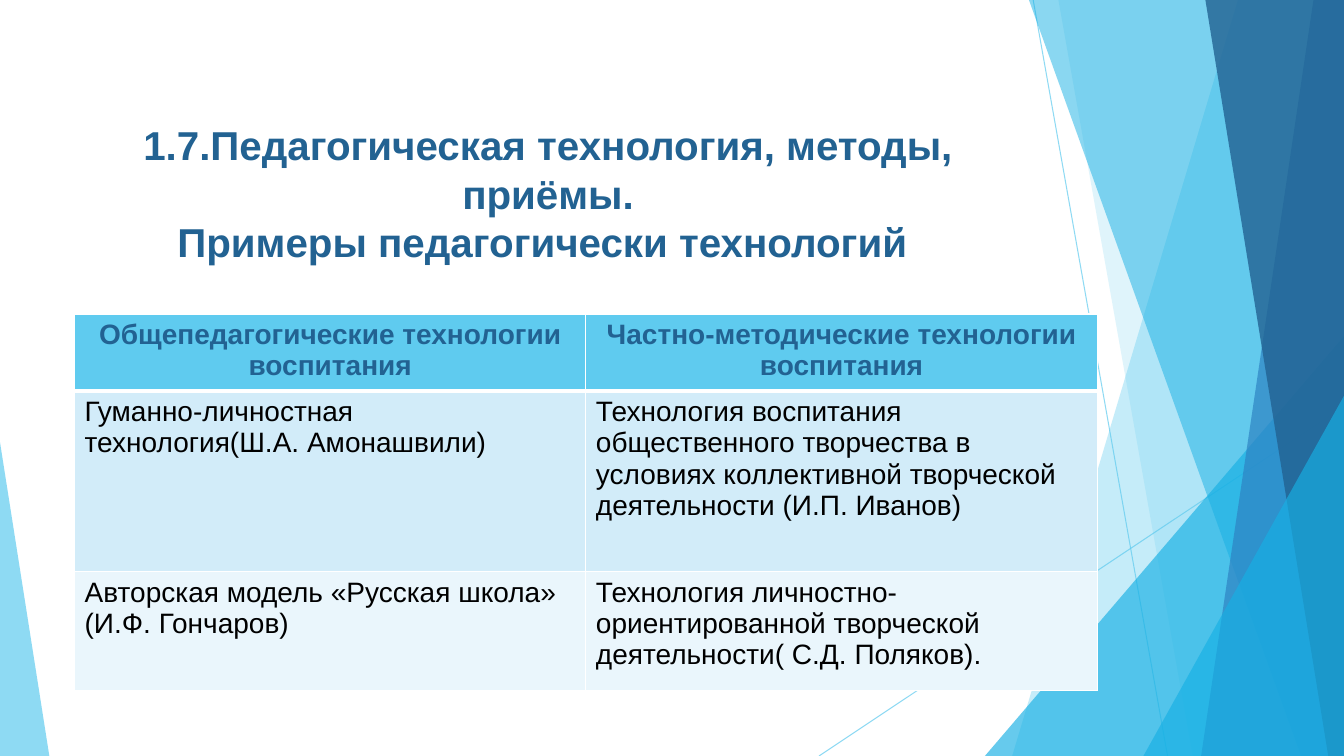
import dataclasses

import lxml.etree
import pptx
import pptx.dml.color
import pptx.enum.shapes
import pptx.enum.text
import pptx.oxml.ns
import pptx.util

ALIGN = pptx.enum.text.PP_ALIGN
TRIANGLE = pptx.enum.shapes.MSO_SHAPE.ISOSCELES_TRIANGLE
STRAIGHT = pptx.enum.shapes.MSO_CONNECTOR.STRAIGHT


@dataclasses.dataclass(frozen=True)
class Theme:
    font: str = "Arial"
    title_size: float = 28.8
    title_leading: float = 34.5
    table_size: float = 20
    sky: str = "5FCBEF"
    azure: str = "17B0E4"
    blue: str = "2E83C3"
    navy: str = "226292"
    black: str = "000000"
    white: str = "FFFFFF"
    row_fills: tuple = ("5FCBEF", "D2ECF9", "EAF6FC")
    thin: float = 0.75
    border: float = 1
    header_border: float = 3


def rgb(color):
    return pptx.dml.color.RGBColor.from_string(color)


def assign(target, values):
    for name, value in values.items():
        setattr(target, name, value)


def add_xml(parent, tag, **attributes):
    return lxml.etree.SubElement(parent, pptx.oxml.ns.qn(tag), attributes)


class SlideBuilder:
    """Draws themed elements on one slide, with lengths in px."""

    SCALE = 9525
    WIDTH, HEIGHT = 1280, 720

    def __init__(self, presentation, theme):
        assign(presentation, {"slide_width": self.px(self.WIDTH),
                              "slide_height": self.px(self.HEIGHT)})
        self.theme = theme
        self.slide = presentation.slides.add_slide(presentation.slide_layouts[6])
        self.shapes = self.slide.shapes

    def px(self, length):
        return pptx.util.Emu(length * self.SCALE)

    def box(self, *lengths):
        return [self.px(length) for length in lengths]

    def paint(self, fill, color, opacity=100):
        fill.solid()
        fill.fore_color.rgb = rgb(color)
        if opacity < 100:
            for node in fill._xPr.iter(pptx.oxml.ns.qn("a:srgbClr")):
                add_xml(node, "a:alpha", val=str(opacity * 1000))

    def finish(self, shape, color, opacity):
        shape.shadow.inherit = False
        shape.line.fill.background()
        self.paint(shape.fill, color, opacity)

    def line(self, start, end, color, opacity):
        connector = self.shapes.add_connector(STRAIGHT, *self.box(*start, *end))
        connector.line.width = pptx.util.Pt(self.theme.thin)
        self.paint(connector.line.fill, color, opacity)
        add_xml(connector._element.spPr, "a:effectLst")

    def band(self, top_x, bottom_x, color, opacity):
        builder = self.shapes.build_freeform(top_x, 0, scale=self.SCALE)
        builder.add_line_segments([(self.WIDTH, 0), (self.WIDTH, self.HEIGHT),
                                   (bottom_x, self.HEIGHT)])
        self.finish(builder.convert_to_shape(), color, opacity)

    def triangle(self, left, top, width, apex, color, opacity):
        shape = self.shapes.add_shape(
            TRIANGLE, *self.box(left, top, width, self.HEIGHT - top))
        shape.adjustments[0] = apex
        self.finish(shape, color, opacity)

    def set_text(self, frame, text, size, color, bold, align):
        frame.text = text
        paragraph = frame.paragraphs[0]
        paragraph.alignment = align
        for run in paragraph.runs:
            assign(run.font, {"name": self.theme.font, "bold": bold,
                              "size": pptx.util.Pt(size)})
            run.font.color.rgb = rgb(color)
        return paragraph

    def title(self, text, left, top, width, height, inset):
        frame = self.shapes.add_textbox(*self.box(left, top, width, height)).text_frame
        assign(frame, {"word_wrap": True, "margin_top": self.px(inset),
                       "vertical_anchor": pptx.enum.text.MSO_ANCHOR.TOP})
        paragraph = self.set_text(frame, text, self.theme.title_size,
                                  self.theme.navy, True, ALIGN.CENTER)
        paragraph.line_spacing = pptx.util.Pt(self.theme.title_leading)

    def borders(self, cell, widths):
        properties = cell._tc.get_or_add_tcPr()
        for index, (side, width) in enumerate(widths.items()):
            line = add_xml(properties, f"a:ln{side}", w=str(pptx.util.Pt(width)))
            fill = add_xml(line, "a:solidFill")
            add_xml(fill, "a:srgbClr", val=self.theme.white)
            properties.insert(index, line)

    def table(self, rows, left, top, width, heights):
        theme = self.theme
        frame = self.shapes.add_table(len(rows), len(rows[0]),
                                      *self.box(left, top, width, sum(heights)))
        for row_index, texts in enumerate(rows):
            frame.table.rows[row_index].height = self.px(heights[row_index])
            header = row_index == 0
            widths = dict.fromkeys("LRTB", theme.border)
            if row_index < 2:
                widths["B" if header else "T"] = theme.header_border
            for column_index, text in enumerate(texts):
                cell = frame.table.cell(row_index, column_index)
                self.set_text(cell.text_frame, text, theme.table_size,
                              theme.navy if header else theme.black, header,
                              ALIGN.CENTER if header else ALIGN.LEFT)
                self.paint(cell.fill, theme.row_fills[row_index])
                self.borders(cell, widths)


def main():
    presentation = pptx.Presentation()
    theme = Theme()
    builder = SlideBuilder(presentation, theme)

    builder.line((984, 0), (1112, 720), theme.sky, 70)
    builder.line((1280, 387), (780, 720), theme.sky, 70)
    builder.band(1179, 964, theme.sky, 36)
    builder.band(1008, 1136, theme.sky, 20)
    builder.triangle(938, 320, 342, 1, theme.azure, 66)
    builder.band(980, 1239, theme.azure, 50)
    builder.band(1251, 1144, theme.blue, 70)
    builder.band(1148, 1265, theme.navy, 80)
    builder.triangle(1089, 377, 191, 1, theme.azure, 66)
    builder.triangle(0, 421, 47, 0, theme.sky, 70)

    builder.title("1.7.Педагогическая технология, методы, приёмы.\v"
                  "Примеры педагогически технологий ", 71, 64, 902, 95, 51)
    builder.table([
        ("Общепедагогические технологии воспитания",
         "Частно-методические технологии воспитания"),
        ("Гуманно-личностная технология(Ш.А. Амонашвили)",
         "Технология воспитания общественного творчества в условиях "
         "коллективной творческой деятельности (И.П. Иванов)"),
        ("Авторская модель «Русская школа» (И.Ф. Гончаров)",
         "Технология личностно-ориентированной творческой деятельности"
         "( С.Д. Поляков)."),
    ], 71, 299, 974, (68, 172, 113))
    presentation.save("out.pptx")


if __name__ == "__main__":
    main()
